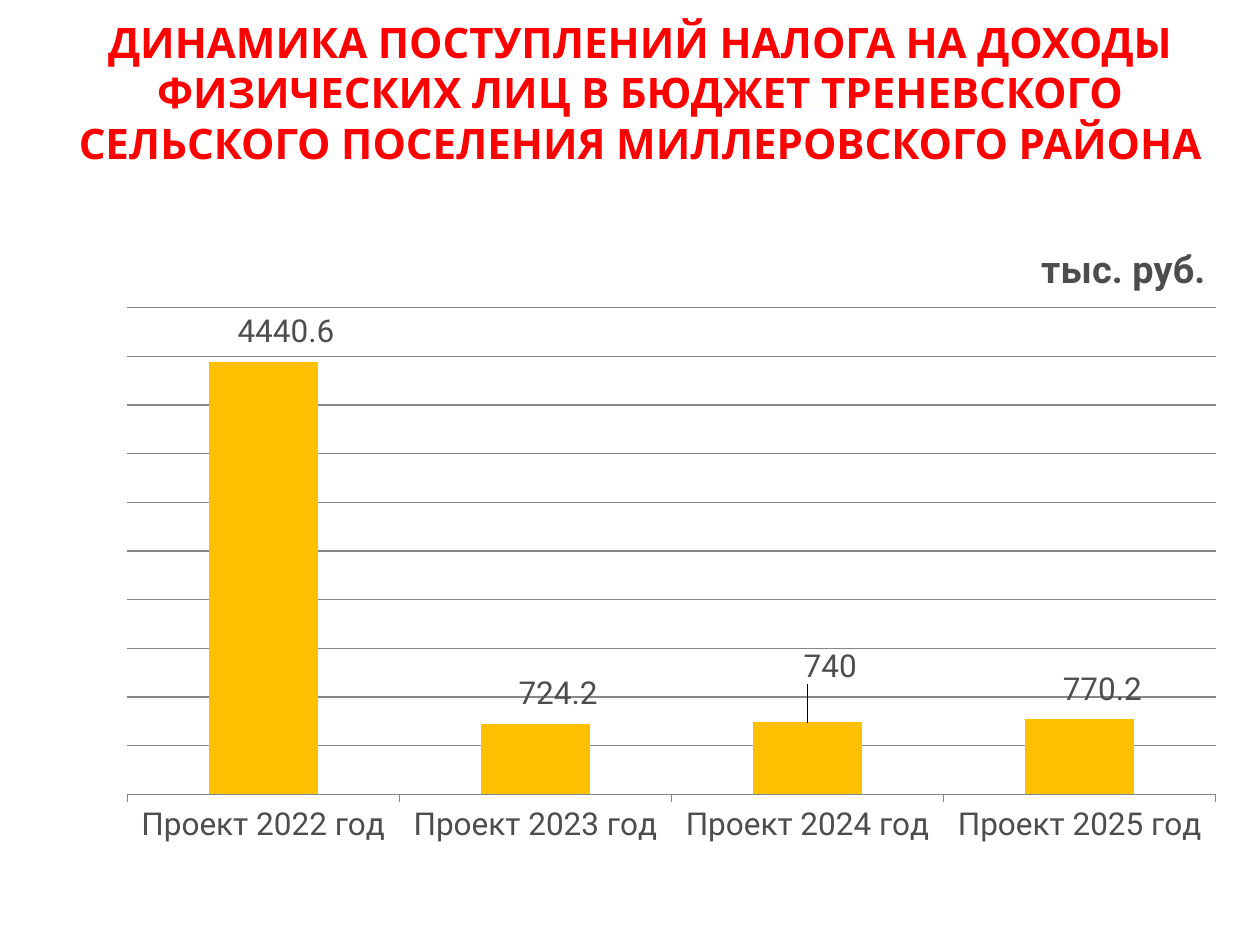
from lxml.etree import SubElement
from pptx import Presentation
from pptx.chart.data import CategoryChartData
from pptx.dml.color import RGBColor
from pptx.enum.chart import (XL_CHART_TYPE, XL_LABEL_POSITION,
                             XL_TICK_LABEL_POSITION, XL_TICK_MARK)
from pptx.enum.text import PP_ALIGN
from pptx.oxml.ns import qn
from pptx.util import Inches, Pt

RED = RGBColor(0xFF, 0x00, 0x00)
GOLD = RGBColor(0xFF, 0xC0, 0x00)
DARK = RGBColor(0x4D, 0x4D, 0x4D)
GRAY = RGBColor(0x87, 0x87, 0x87)

HEAD = {"name": "Karla", "size": Pt(24), "bold": True}
BODY = {"name": "Roboto", "size": Pt(18), "bold": False}
UNIT = {"name": "Roboto", "size": Pt(21.6), "bold": True}

TITLE = ("ДИНАМИКА ПОСТУПЛЕНИЙ НАЛОГА НА ДОХОДЫ\v"
         "ФИЗИЧЕСКИХ ЛИЦ В БЮДЖЕТ ТРЕНЕВСКОГО "
         "СЕЛЬСКОГО ПОСЕЛЕНИЯ МИЛЛЕРОВСКОГО РАЙОНА")
YEARS = range(2022, 2026)
SUMS = (4440.6, 724.2, 740, 770.2)
# Label shifts as shares of the chart size
SHIFTS = ((0.02, -0.01), (0.02, -0.01), (0.02, -0.05), (0.02, -0.01))


def style(font, look, color):
    for key, value in look.items():
        setattr(font, key, value)
    font.color.rgb = color


def place(node, spot, **parts):
    """Give a chart part a manual layout, as the child at index spot."""
    for old in node.findall(qn("c:layout")):
        node.remove(old)
    layout = SubElement(node, qn("c:layout"))
    node.insert(spot, layout)
    manual = SubElement(layout, qn("c:manualLayout"))
    for key, value in parts.items():
        SubElement(manual, qn(f"c:{key}")).set("val", str(value))


def add_head(slide):
    box = slide.shapes.add_textbox(Inches(0.33), Inches(0.08),
                                   Inches(9.5), Inches(1.31))
    frame = box.text_frame
    frame.word_wrap = True
    para = frame.paragraphs[0]
    para.text = TITLE
    para.alignment = PP_ALIGN.CENTER
    for run in para.runs:
        style(run.font, HEAD, RED)


def add_unit(chart):
    chart.has_title = True
    para = chart.chart_title.text_frame.paragraphs[0]
    para.text = "тыс. руб."
    style(para.runs[0].font, UNIT, DARK)
    place(chart.element.find(".//" + qn("c:title")), 1,
          xMode="edge", yMode="edge", x=0.82, y=0.04)


def set_axes(chart):
    axis = chart.value_axis
    axis.minimum_scale, axis.maximum_scale, axis.major_unit = 0, 5000, 500
    axis.has_major_gridlines = True
    axis.tick_label_position = XL_TICK_LABEL_POSITION.NONE
    axis.visible = False
    cats = chart.category_axis
    cats.major_tick_mark = XL_TICK_MARK.OUTSIDE
    for line in (axis.major_gridlines.format.line, cats.format.line):
        line.color.rgb = GRAY
        line.width = Pt(0.75)


def set_bars(chart):
    plot = chart.plots[0]
    plot.gap_width = 150
    plot.vary_by_categories = False
    bars = plot.series[0]
    bars.format.fill.solid()
    bars.format.fill.fore_color.rgb = GOLD
    bars.data_labels.show_value = True
    for i in range(len(SUMS)):
        label = bars.points[i].data_label
        style(label.font, BODY, DARK)
        label.position = XL_LABEL_POSITION.OUTSIDE_END
    for node, (x, y) in zip(chart.element.iter(qn("c:dLbl")), SHIFTS):
        place(node, 1, x=x, y=y)


def add_bars(slide):
    data = CategoryChartData()
    data.categories = [f"Проект {year} год" for year in YEARS]
    data.add_series("Series 1", SUMS)
    chart = slide.shapes.add_chart(
        XL_CHART_TYPE.COLUMN_CLUSTERED, Inches(0.83), Inches(1.67),
        Inches(9), Inches(5.15), data).chart
    chart.has_legend = False
    style(chart.font, BODY, DARK)
    add_unit(chart)
    set_axes(chart)
    set_bars(chart)
    place(chart.element.find(".//" + qn("c:plotArea")), 0,
          layoutTarget="inner", xMode="edge", yMode="edge",
          x=0.02, y=0.15, w=0.96, h=0.75)


def main():
    deck = Presentation()
    deck.slide_width, deck.slide_height = Inches(10), Inches(7.5)
    slide = deck.slides.add_slide(deck.slide_layouts[6])
    # Heading
    add_head(slide)
    # Column chart of tax income
    add_bars(slide)
    deck.save("out.pptx")


if __name__ == "__main__":
    main()
